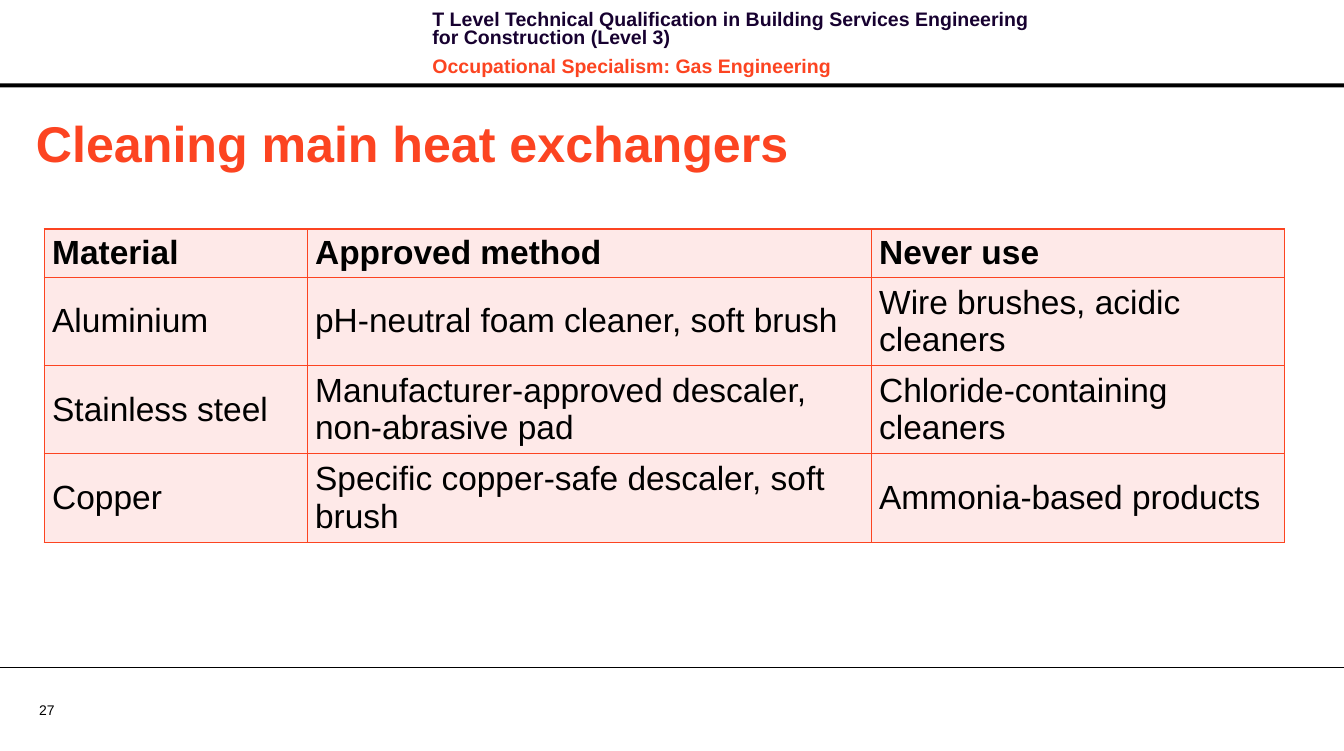
from lxml.etree import SubElement
from pptx import Presentation
from pptx.dml.color import RGBColor
from pptx.enum.shapes import MSO_CONNECTOR, MSO_SHAPE
from pptx.enum.text import MSO_ANCHOR
from pptx.oxml.ns import qn
from pptx.util import Inches, Pt

COLORS = {"black": "000000", "navy": "170130", "orange": "FC4421", "blush": "FEE9E8"}
FONT = "Arial"
WIDTH, HEIGHT = 13.39, 7.48
COLUMN_WIDTHS = [2.62, 5.62, 4.12]
ROW_HEIGHTS = [0.46, 0.83, 0.83, 0.83]
CLEANING_METHODS = [
    ["Material", "Approved method", "Never use"],
    ["Aluminium", "pH-neutral foam cleaner, soft brush", "Wire brushes, acidic cleaners"],
    ["Stainless steel", "Manufacturer-approved descaler, non-abrasive pad",
     "Chloride-containing cleaners"],
    ["Copper", "Specific copper-safe descaler, soft brush", "Ammonia-based products"],
]


def rgb(name):
    """Return the palette colour as an RGBColor."""
    return RGBColor.from_string(COLORS[name])


def style(paragraph, size, color, bold=False):
    """Set the font of every run in a paragraph."""
    for run in paragraph.runs:
        run.font.name = FONT
        run.font.size = Pt(size)
        run.font.bold = bold
        run.font.color.rgb = rgb(color)


def add_text(slide, box, text, size, color, bold=False, anchor=MSO_ANCHOR.MIDDLE, inset=(0.1, 0.05)):
    """Place a wrapped text box and return its text frame."""
    frame = slide.shapes.add_textbox(*map(Inches, box)).text_frame
    frame.word_wrap = True
    frame.vertical_anchor = anchor
    frame.margin_left = frame.margin_right = Inches(inset[0])
    frame.margin_top = frame.margin_bottom = Inches(inset[1])
    frame.text = text
    for paragraph in frame.paragraphs:
        style(paragraph, size, color, bold)
    return frame


def add_header(slide, left, top, width, height):
    """Place the course heading and the bar that closes the header."""
    heading = add_text(
        slide, (left + 4.21, top + 0.07, 6.37, 0.64),
        "T Level Technical Qualification in Building Services Engineering "
        "for Construction (Level 3)\nOccupational Specialism: Gas Engineering",
        14, "navy", True, MSO_ANCHOR.TOP)
    qualification, specialism = heading.paragraphs
    for paragraph in (qualification, specialism):
        paragraph.line_spacing = Pt(13.1)
        paragraph.space_after = Pt(4)
    specialism.space_before = Pt(4)
    style(specialism, 14, "orange", True)

    bar_height = 0.04
    bar = slide.shapes.add_shape(
        MSO_SHAPE.RECTANGLE, Inches(left), Inches(top + height - bar_height),
        Inches(width), Inches(bar_height))
    bar.shadow.inherit = False
    bar.fill.solid()
    bar.fill.fore_color.rgb = rgb("black")
    bar.line.fill.background()


def add_borders(cell):
    """Draw a thin orange border on all four sides of a cell."""
    properties = cell._tc.get_or_add_tcPr()
    for position, side in enumerate(("a:lnL", "a:lnR", "a:lnT", "a:lnB")):
        border = SubElement(properties, qn(side), w=str(Pt(1)))
        fill = SubElement(border, qn("a:solidFill"))
        SubElement(fill, qn("a:srgbClr"), val=COLORS["orange"])
        properties.insert(position, border)


def add_methods_table(slide, left, top, width, height):
    """Place the table of cleaning methods for each material."""
    table = slide.shapes.add_table(
        len(ROW_HEIGHTS), len(COLUMN_WIDTHS),
        Inches(left), Inches(top), Inches(width), Inches(height)).table
    for column, column_width in zip(table.columns, COLUMN_WIDTHS):
        column.width = Inches(column_width)
    for row_index, (row, row_height) in enumerate(zip(table.rows, ROW_HEIGHTS)):
        row.height = Inches(row_height)
        for cell, text in zip(row.cells, CLEANING_METHODS[row_index]):
            cell.text_frame.text = text
            cell.vertical_anchor = MSO_ANCHOR.MIDDLE
            cell.margin_left = cell.margin_right = Inches(0.08)
            cell.margin_top = cell.margin_bottom = Inches(0.04)
            cell.fill.solid()
            cell.fill.fore_color.rgb = rgb("blush")
            style(cell.text_frame.paragraphs[0], 24, "black", row_index == 0)
            add_borders(cell)


def add_footer(slide, left, top, width):
    """Place the footer rule and the page number below it."""
    rule = slide.shapes.add_connector(
        MSO_CONNECTOR.STRAIGHT, Inches(left), Inches(top), Inches(left + width), Inches(top))
    rule.line.color.rgb = rgb("black")
    rule.line.width = Pt(0.75)
    SubElement(rule._element.spPr, qn("a:effectLst"))
    add_text(slide, (left + 0.39, top + 0.34, 0.64, 0.17), "27", 10, "black", inset=(0, 0))


def main():
    """Build the slide and save it."""
    presentation = Presentation()
    presentation.slide_width, presentation.slide_height = Inches(WIDTH), Inches(HEIGHT)
    slide = presentation.slides.add_slide(presentation.slide_layouts[6])
    add_header(slide, 0, 0, WIDTH, 0.87)
    add_text(slide, (0.26, 1.06, 12.72, 0.71), "Cleaning main heat exchangers", 36, "orange", True)
    add_methods_table(slide, 0.44, 2.28, sum(COLUMN_WIDTHS), sum(ROW_HEIGHTS))
    add_footer(slide, 0, 6.65, WIDTH)
    presentation.save("out.pptx")


if __name__ == "__main__":
    main()
